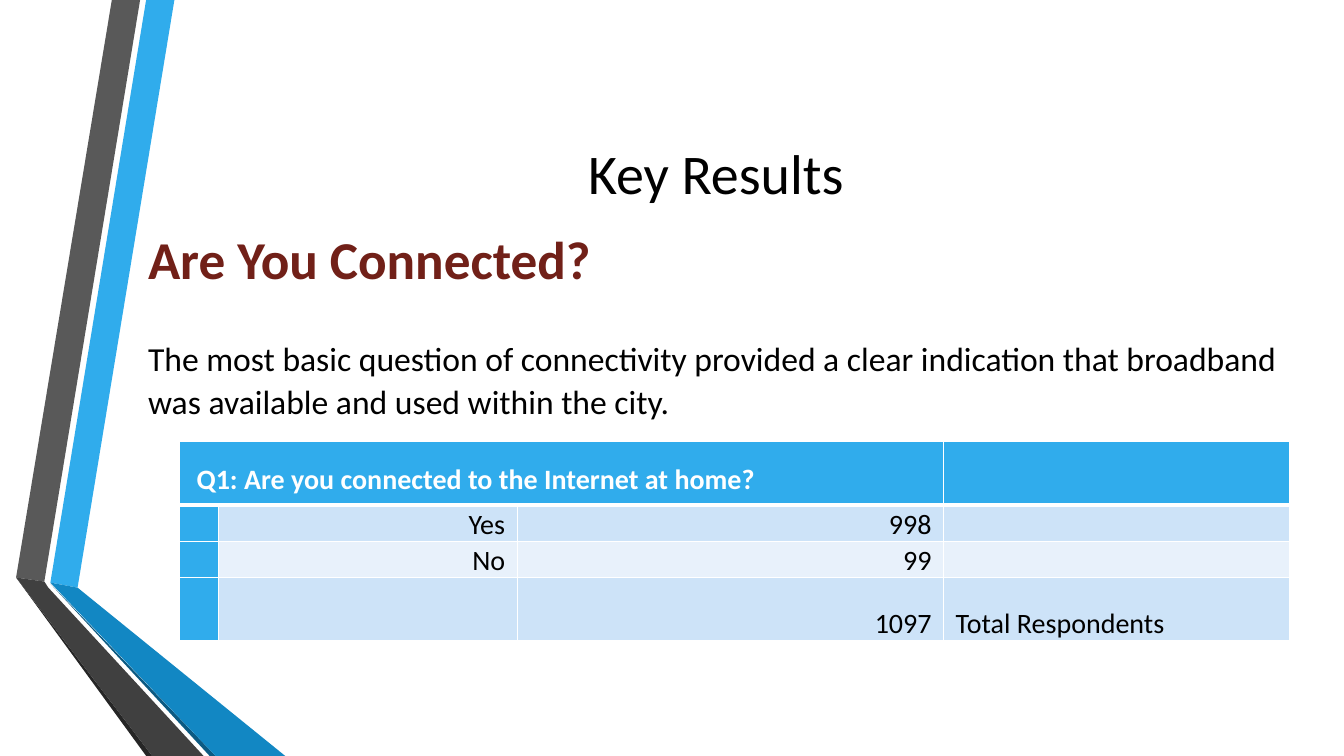
from dataclasses import dataclass

import lxml.etree
import pptx
import pptx.dml.color
import pptx.enum.text
import pptx.oxml.ns
import pptx.util

Inches = pptx.util.Inches
Pt = pptx.util.Pt
ALIGN = pptx.enum.text.PP_ALIGN
ANCHOR = pptx.enum.text.MSO_ANCHOR


@dataclass(frozen=True)
class Theme:
    font: str = "Calibri"
    black: str = "000000"
    white: str = "FFFFFF"
    maroon: str = "712018"
    blue: str = "30ACEC"
    blue_dark: str = "1287C3"
    blue_shadow: str = "0C5A82"
    gray: str = "595959"
    gray_dark: str = "404040"
    gray_shadow: str = "262626"
    band_odd: str = "CDE3F8"
    band_even: str = "E8F1FB"
    title_size: int = 40
    heading_size: int = 38
    body_size: int = 24
    table_size: int = 20
    line_spacing: float = 1.07


THEME = Theme()

RIBBONS = [
    (THEME.blue, [(0.5, 5.78), (0.77, 5.83), (1.73, 0), (1.45, 0)]),
    (THEME.gray, [(1.39, 0), (1.11, 0), (0.16, 5.73), (0.44, 5.77)]),
    (THEME.gray_shadow, [(0.16, 5.73), (1.45, 7.5), (1.51, 7.5)]),
    (THEME.blue_shadow, [(0.5, 5.79), (2.08, 7.5), (2.14, 7.5)]),
    (THEME.blue_dark, [(0.5, 5.78), (2.14, 7.5), (2.83, 7.5), (0.77, 5.83)]),
    (THEME.gray_dark, [(2.02, 7.5), (0.48, 5.83), (0.44, 5.77), (0.16, 5.73), (1.51, 7.5)]),
]

COLUMN_WIDTHS = [0.39, 2.96, 4.23, 3.43]
ROW_HEIGHTS = [0.63, 0.36, 0.36, 0.63]
ANSWERS = [
    ["Q1: Are you connected to the Internet at home?", "", "", ""],
    ["", "Yes", "998", ""],
    ["", "No", "99", ""],
    ["", "", "1097", "Total Respondents"],
]


def rgb(color):
    return pptx.dml.color.RGBColor.from_string(color)


def place(shape, left, top, width, height):
    shape.left, shape.top = Inches(left), Inches(top)
    shape.width, shape.height = Inches(width), Inches(height)


def add_run(paragraph, text, size, color, bold=False):
    run = paragraph.add_run()
    run.text = text
    run.font.name = THEME.font
    run.font.size = Pt(size)
    run.font.bold = bold
    run.font.color.rgb = rgb(color)


def add_ribbon(slide, color, points):
    corners = [(Inches(x), Inches(y)) for x, y in points]
    builder = slide.shapes.build_freeform(*corners[0])
    builder.add_line_segments(corners[1:], close=True)
    shape = builder.convert_to_shape()
    shape.shadow.inherit = False
    shape.fill.solid()
    shape.fill.fore_color.rgb = rgb(color)
    shape.line.fill.background()


def set_title(slide, text):
    title = slide.shapes.title
    place(title, 1.62, 0.75, 10.96, 1.92)
    title.text_frame.vertical_anchor = ANCHOR.MIDDLE
    paragraph = title.text_frame.paragraphs[0]
    paragraph.alignment = ALIGN.CENTER
    add_run(paragraph, text, THEME.title_size, THEME.black)


def add_body(slide, heading, text):
    box = slide.shapes.add_textbox(Inches(1.37), Inches(2.05), Inches(11.83), Inches(2.28))
    frame = box.text_frame
    frame.word_wrap = True
    frame.vertical_anchor = ANCHOR.MIDDLE
    first = frame.paragraphs[0]
    first.space_before = Pt(2)
    add_run(first, heading, THEME.heading_size, THEME.maroon, bold=True)
    second = frame.add_paragraph()
    second.space_before = Pt(31.5)
    second.space_after = Pt(8)
    add_run(second, text, THEME.body_size, THEME.black)
    for paragraph in frame.paragraphs:
        paragraph.line_spacing = THEME.line_spacing


def set_borders(cell, widths):
    """Draw white borders; widths gives points for left, right, top, bottom."""
    properties = cell._tc.get_or_add_tcPr()
    for index, (side, width) in enumerate(zip("LRTB", widths)):
        line = lxml.etree.Element(pptx.oxml.ns.qn(f"a:ln{side}"), w=str(Pt(width)))
        fill = lxml.etree.SubElement(line, pptx.oxml.ns.qn("a:solidFill"))
        lxml.etree.SubElement(fill, pptx.oxml.ns.qn("a:srgbClr"), val=THEME.white)
        properties.insert(index, line)


def fill_color(row, column):
    if row == 0 or column == 0:
        return THEME.blue
    return THEME.band_odd if row % 2 else THEME.band_even


def format_cell(cell, row, column, text):
    header = row == 0
    cell.fill.solid()
    cell.fill.fore_color.rgb = rgb(fill_color(row, column))
    set_borders(cell, (1, 1, 3 if row == 1 else 1, 3 if header else 1))
    cell.vertical_anchor = ANCHOR.BOTTOM
    cell.margin_left = cell.margin_right = Inches(0.17 if header else 0.12)
    cell.margin_top = cell.margin_bottom = Inches(0.08 if header else 0)
    if text:
        paragraph = cell.text_frame.paragraphs[0]
        paragraph.line_spacing = THEME.line_spacing
        paragraph.alignment = ALIGN.RIGHT if column in (1, 2) else ALIGN.LEFT
        color = THEME.white if header else THEME.black
        add_run(paragraph, text, THEME.table_size, color, bold=header)


def add_answer_table(slide):
    frame = slide.shapes.add_table(
        len(ROW_HEIGHTS), len(COLUMN_WIDTHS), Inches(1.78), Inches(4.38),
        Inches(sum(COLUMN_WIDTHS)), Inches(sum(ROW_HEIGHTS)))
    table = frame.table
    table.first_row = table.horz_banding = False
    for column, width in zip(table.columns, COLUMN_WIDTHS):
        column.width = Inches(width)
    for row, height in zip(table.rows, ROW_HEIGHTS):
        row.height = Inches(height)
    table.cell(0, 0).merge(table.cell(0, 2))
    for row, texts in enumerate(ANSWERS):
        for column, text in enumerate(texts):
            format_cell(table.cell(row, column), row, column, text)


def main():
    presentation = pptx.Presentation()
    presentation.slide_width = Inches(13.33)
    presentation.slide_height = Inches(7.5)
    slide = presentation.slides.add_slide(presentation.slide_layouts[5])
    for color, points in RIBBONS:
        add_ribbon(slide, color, points)
    set_title(slide, "Key Results")
    add_body(slide, "Are You Connected?",
             "The most basic question of connectivity provided a clear indication "
             "that broadband was available and used within the city.")
    add_answer_table(slide)
    presentation.save("out.pptx")


if __name__ == "__main__":
    main()
